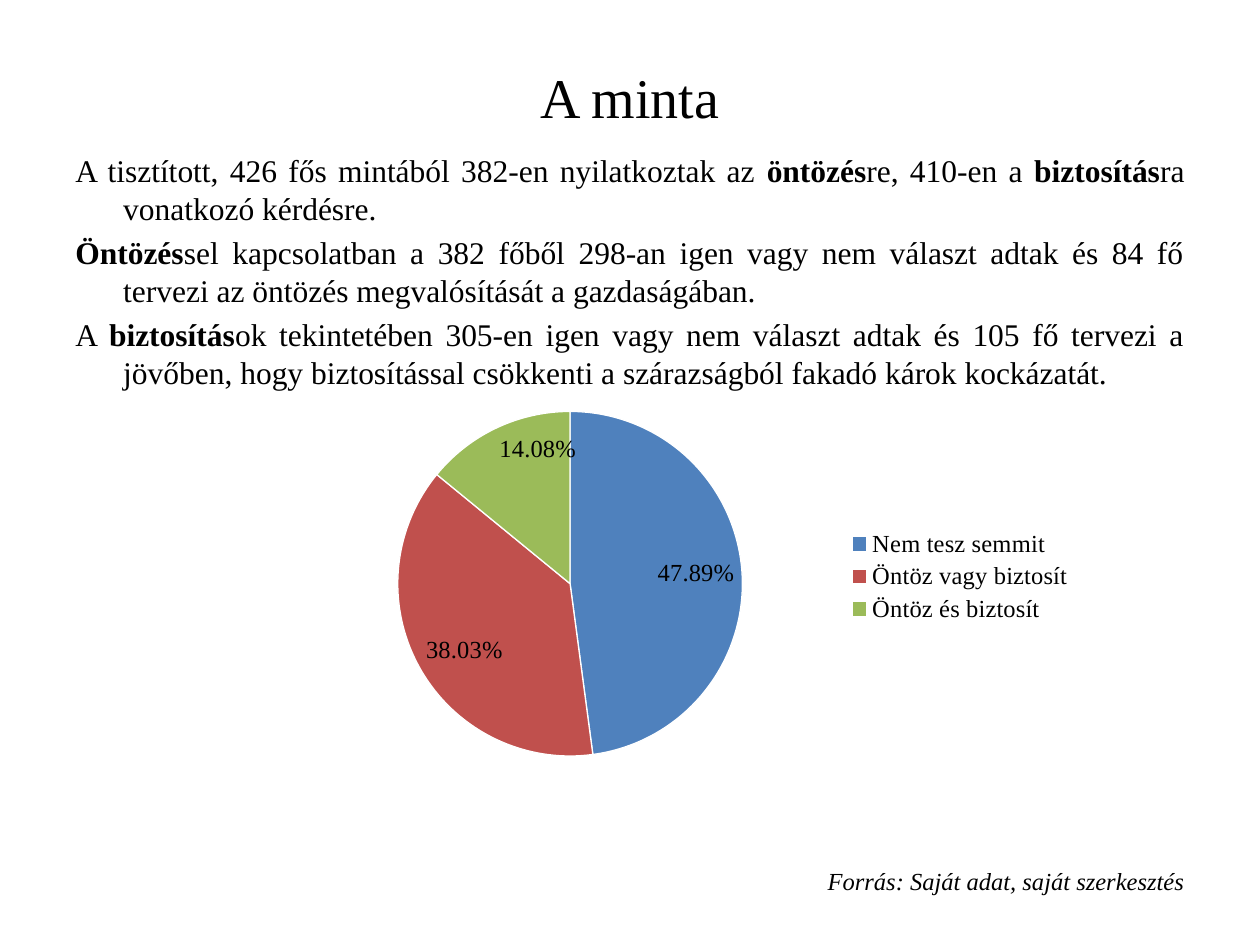
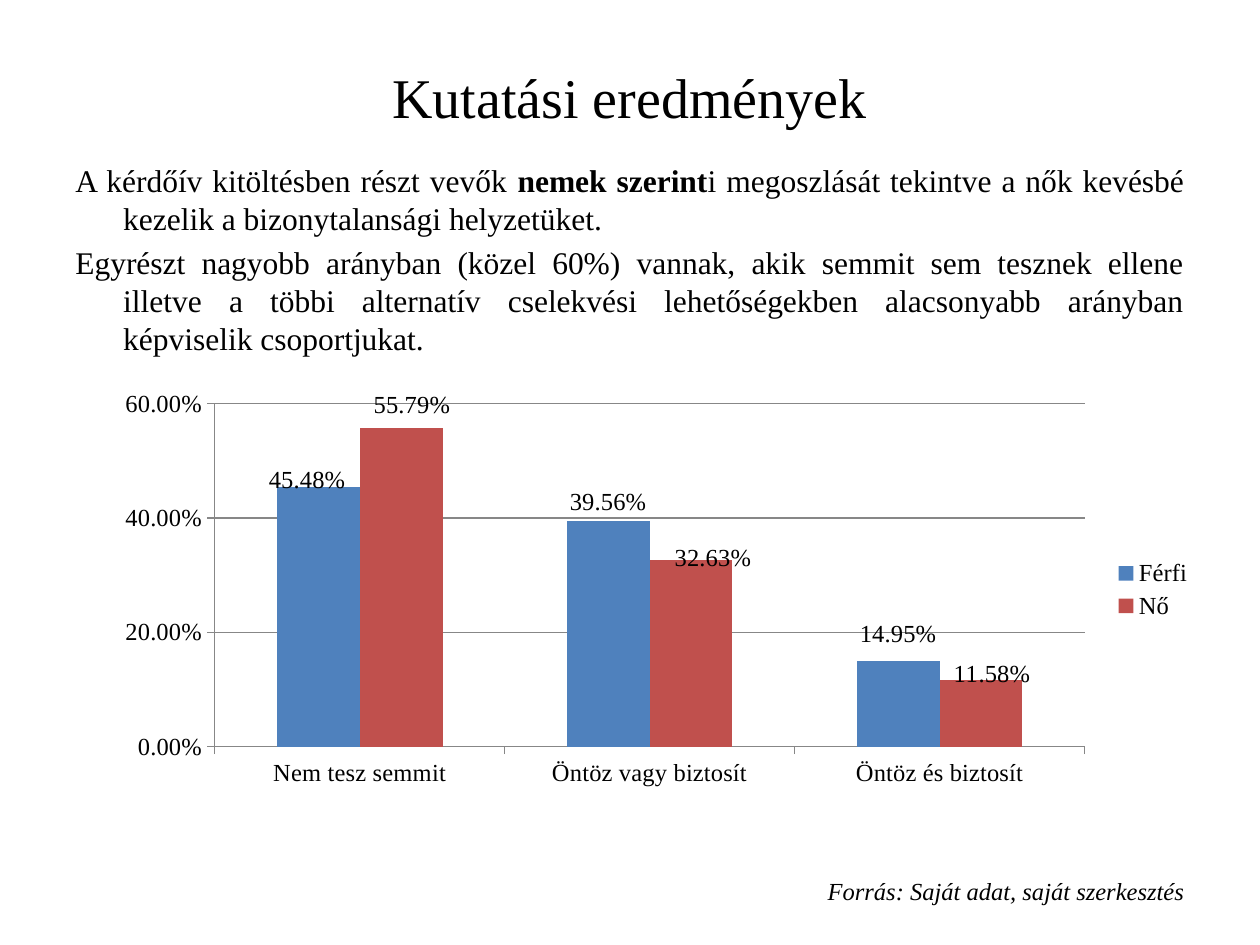
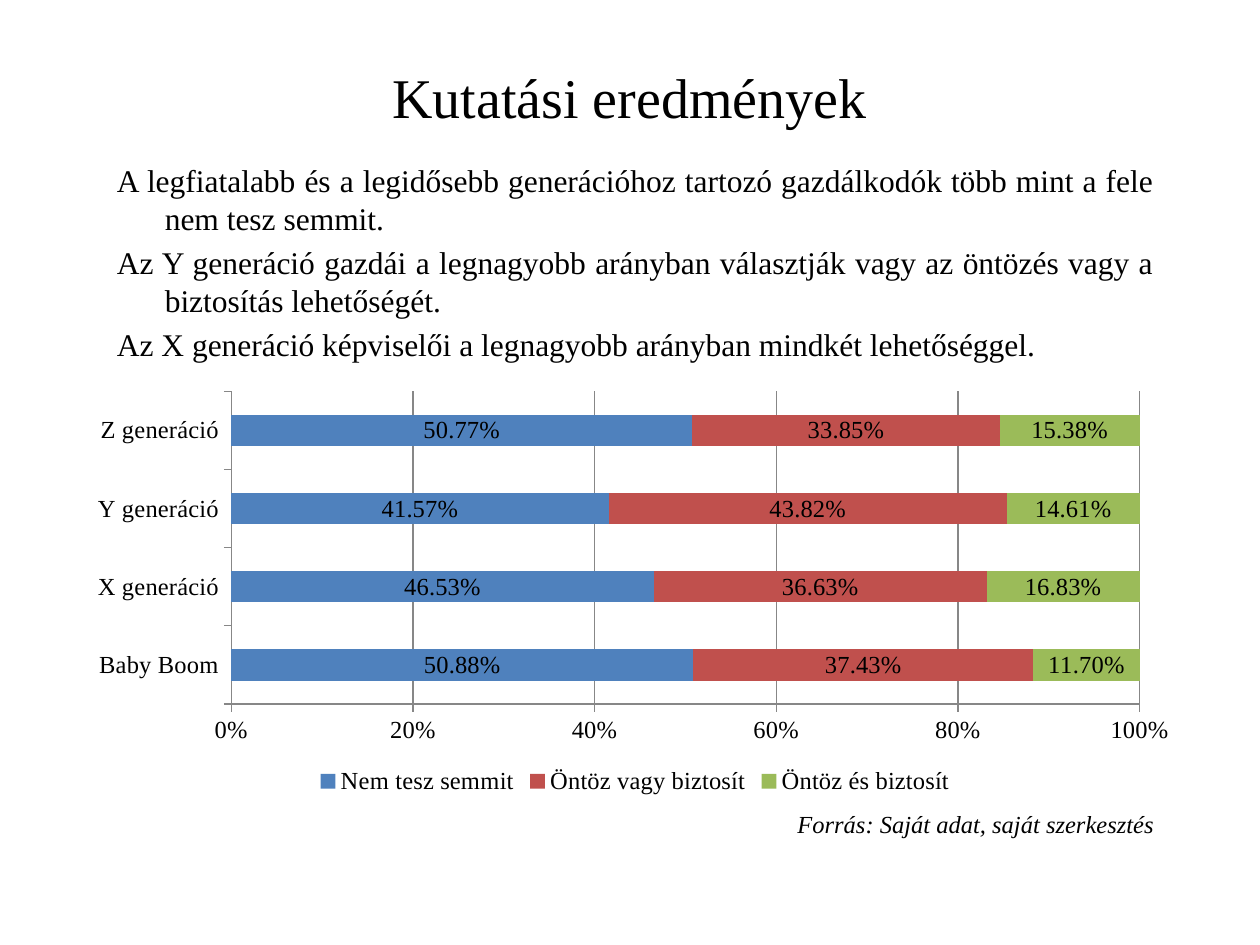
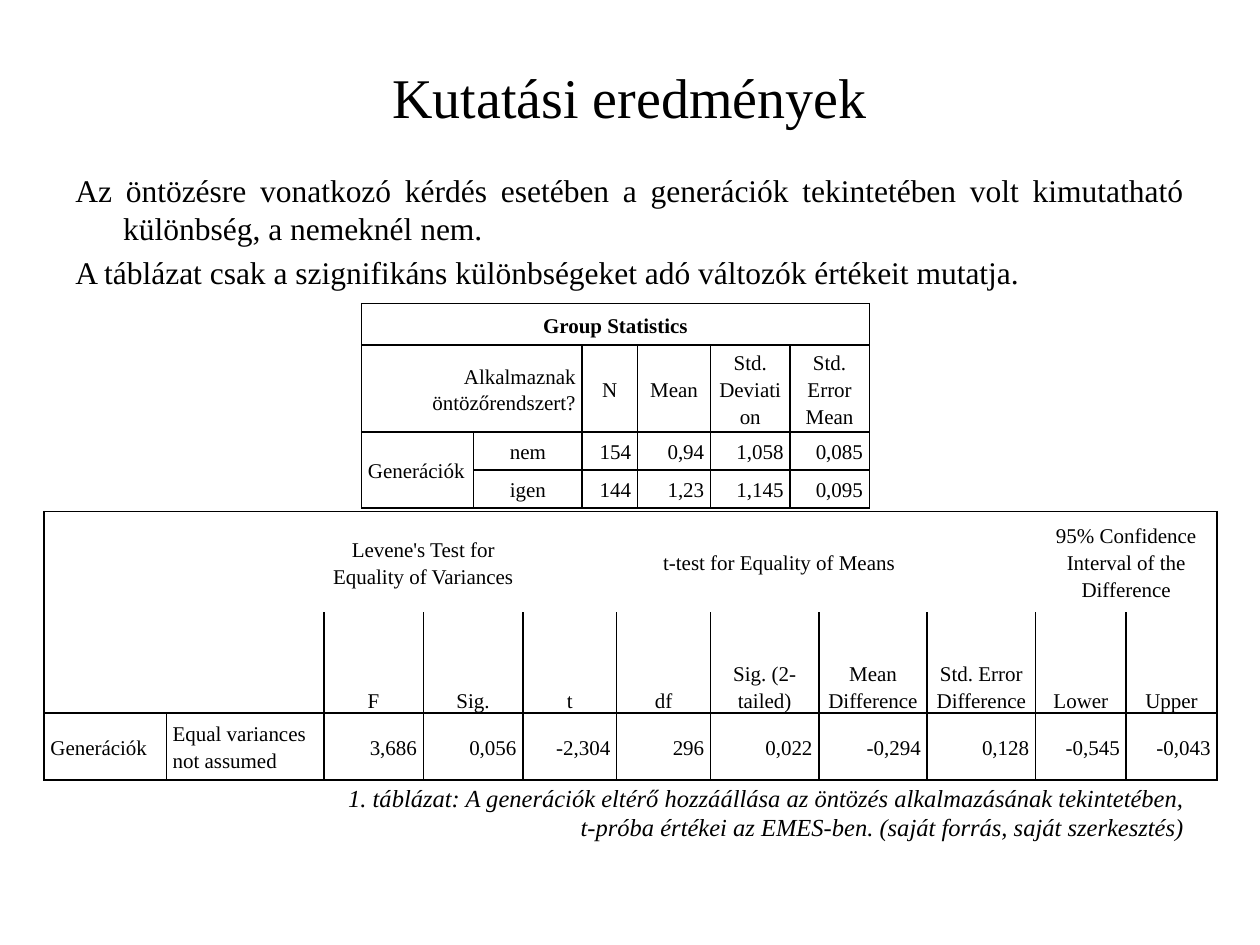
from dataclasses import dataclass

from lxml import etree
from pptx import Presentation
from pptx.chart.data import CategoryChartData
from pptx.dml.color import RGBColor
from pptx.enum.chart import XL_CHART_TYPE, XL_LABEL_POSITION, XL_LEGEND_POSITION, XL_TICK_MARK
from pptx.enum.text import MSO_ANCHOR, PP_ALIGN
from pptx.oxml.ns import qn
from pptx.util import Inches, Pt

PIE, COLUMNS, STACKED = XL_CHART_TYPE.PIE, XL_CHART_TYPE.COLUMN_CLUSTERED, XL_CHART_TYPE.BAR_STACKED_100
INSIDE_END, OUTSIDE_END, CENTERED = (
    XL_LABEL_POSITION.INSIDE_END, XL_LABEL_POSITION.OUTSIDE_END, XL_LABEL_POSITION.CENTER)
LEGEND_RIGHT, LEGEND_BOTTOM = XL_LEGEND_POSITION.RIGHT, XL_LEGEND_POSITION.BOTTOM
TICK_OUTSIDE = XL_TICK_MARK.OUTSIDE
JUSTIFY, RIGHT, CENTER = PP_ALIGN.JUSTIFY, PP_ALIGN.RIGHT, PP_ALIGN.CENTER
TOP, MIDDLE, BOTTOM = MSO_ANCHOR.TOP, MSO_ANCHOR.MIDDLE, MSO_ANCHOR.BOTTOM
ALIGNS = {"l": PP_ALIGN.LEFT, "c": CENTER, "r": RIGHT}
ANCHORS = {"m": MIDDLE, "b": BOTTOM}

# The slide is a grid of 100 columns by 75 rows of square units.
UNIT = Inches(0.1)
COLUMN_COUNT, ROW_COUNT = 100, 75
NO_TABLE_STYLE = "{2D5ABB26-0587-4C30-8999-92F81FD0307C}"


@dataclass(frozen=True)
class Theme:
    font: str = "Times New Roman"
    ink: RGBColor = RGBColor(0, 0, 0)
    paper: RGBColor = RGBColor(255, 255, 255)
    rule: RGBColor = RGBColor(0x87, 0x87, 0x87)
    series: tuple = tuple(map(RGBColor.from_string, ("4F81BD", "C0504D", "9BBB59")))
    title: Pt = Pt(32)
    body: Pt = Pt(18)
    small: Pt = Pt(14)
    cell: Pt = Pt(12)


THEME = Theme()
RESULTS_TITLE = "Kutatási eredmények"
SOURCE = "Forrás: Saját adat, saját szerkesztés"
STRATEGIES = ("Nem tesz semmit", "Öntöz vagy biztosít", "Öntöz és biztosít")


def units(*lengths):
    return [round(length * UNIT) for length in lengths]


def style_font(font, size, bold=False, italic=False):
    font.name, font.size, font.bold, font.italic = THEME.font, size, bold, italic
    font.color.rgb = THEME.ink


def add_run(paragraph, text, size, **style):
    run = paragraph.add_run()
    run.text = text
    style_font(run.font, size, **style)


def add_frame(slide, area, anchor):
    frame = slide.shapes.add_textbox(*units(*area)).text_frame
    frame.word_wrap = True
    frame.vertical_anchor = anchor
    return frame


def add_titled_slide(deck, title):
    slide = deck.slides.add_slide(deck.slide_layouts[6])
    heading = add_frame(slide, (5, 3, 90, 9.3), MIDDLE).paragraphs[0]
    heading.alignment = CENTER
    add_run(heading, title, THEME.title)
    return slide


def add_body(slide, area, statements, source, source_gap):
    """Write hanging statements, whose odd parts are bold, and a source line below."""
    frame = add_frame(slide, area, TOP)
    paragraph = frame.paragraphs[0]
    for parts in statements:
        for index, part in enumerate(parts):
            if part:
                add_run(paragraph, part, THEME.body, bold=index % 2 == 1)
        paragraph.alignment = JUSTIFY
        paragraph.space_before = Pt(3.6)
        paragraph = frame.add_paragraph()
    paragraph.alignment = RIGHT
    paragraph.space_before = Pt(source_gap)
    for index, line in enumerate(source):
        if index:
            paragraph.add_line_break()
        add_run(paragraph, line, THEME.small, italic=True)
    for paragraph in frame.paragraphs:
        properties = paragraph._p.get_or_add_pPr()
        properties.set("marL", str(Inches(0.38)))
        properties.set("indent", str(-Inches(0.38)))


def manual_layout(**values):
    layout = etree.Element(qn("c:layout"))
    manual = etree.SubElement(layout, qn("c:manualLayout"))
    for tag, value in values.items():
        etree.SubElement(manual, qn(f"c:{tag}")).set("val", str(value))
    return layout


def place_plot(chart, x, y, w, h):
    plot_area = chart._chartSpace.chart.plotArea
    for layout in plot_area.findall(qn("c:layout")):
        plot_area.remove(layout)
    plot_area.insert(0, manual_layout(
        layoutTarget="inner", xMode="edge", yMode="edge", x=x, y=y, w=w, h=h))


def add_chart(slide, kind, area, plot_box, categories, series, legend_at, label_at):
    """Add a chart of shares; series maps each name to its values."""
    data = CategoryChartData(number_format="0.00%")
    data.categories = categories
    for name, values in series.items():
        data.add_series(name, values)
    chart = slide.shapes.add_chart(kind, *units(*area), data).chart
    chart.has_title = False
    style_font(chart.font, THEME.small)
    chart.has_legend = True
    chart.legend.position = legend_at
    chart.legend.include_in_layout = False
    style_font(chart.legend.font, THEME.small)
    place_plot(chart, *plot_box)
    for one_series in chart.plots[0].series:
        labels = one_series.data_labels
        labels.show_value = True
        labels.number_format, labels.number_format_is_linked = "0.00%", False
        labels.position = label_at
        style_font(labels.font, THEME.small)
        for leader_lines in one_series._element.iter(qn("c:showLeaderLines")):
            leader_lines.set("val", "0")
    return chart


def paint(element, color):
    element.format.fill.solid()
    element.format.fill.fore_color.rgb = color


def style_bars(chart, top, axis_format, overlap):
    plot = chart.plots[0]
    plot.vary_by_categories = False
    plot.gap_width, plot.overlap = 150, overlap
    for bars, color in zip(plot.series, THEME.series):
        bars.invert_if_negative = False
        paint(bars, color)
    shares = chart.value_axis
    shares.minimum_scale, shares.maximum_scale, shares.major_unit = 0, top, 0.2
    shares.tick_labels.number_format = axis_format
    shares.tick_labels.number_format_is_linked = False
    shares.has_major_gridlines = True
    for axis in (shares, chart.category_axis):
        axis.major_tick_mark = TICK_OUTSIDE
        axis.format.line.color.rgb = THEME.rule
        style_font(axis.tick_labels.font, THEME.small)
    shares.major_gridlines.format.line.color.rgb = THEME.rule


def style_slices(chart):
    plot = chart.plots[0]
    plot.vary_by_categories = True
    for index, color in enumerate(THEME.series):
        point = plot.series[0].points[index]
        paint(point, color)
        point.format.line.color.rgb = THEME.paper
        point.format.line.width = Pt(0.75)


def nudge_label(series, index, dx, dy):
    """Shift one point's label by shares of the chart's size."""
    label = series.points[index].data_label
    label.position = OUTSIDE_END
    style_font(label.font, THEME.small)
    for element in series._element.iter(qn("c:dLbl")):
        if element.find(qn("c:idx")).get("val") == str(index):
            element.insert(1, manual_layout(x=dx, y=dy))


def draw_borders(cell, sides):
    properties = cell._tc.get_or_add_tcPr()
    for side in sides:
        line = etree.SubElement(properties, qn(f"a:ln{side}"), w=str(Pt(1)))
        fill = etree.SubElement(line, qn("a:solidFill"))
        etree.SubElement(fill, qn("a:srgbClr"), val=str(THEME.ink))


def add_table(slide, origin, widths, heights, rows, merges, aligns, anchors, sides_of):
    """Fill a plain table; aligns has a letter per cell, anchors a letter per row."""
    area = units(*origin, sum(widths), sum(heights))
    table = slide.shapes.add_table(len(heights), len(widths), *area).table
    table.first_row = table.horz_banding = False
    table._tbl.tblPr.find(qn("a:tableStyleId")).text = NO_TABLE_STYLE
    for column, width in zip(table.columns, units(*widths)):
        column.width = width
    for row, height in zip(table.rows, units(*heights)):
        row.height = height
    for first_row, first_column, last_row, last_column in merges:
        table.cell(first_row, first_column).merge(table.cell(last_row, last_column))
    for r, row in enumerate(rows):
        for c, text in enumerate(row):
            cell = table.cell(r, c)
            cell.margin_left = cell.margin_right = Inches(0.05)
            cell.margin_top = cell.margin_bottom = 0
            cell.vertical_anchor = ANCHORS[anchors[r]]
            draw_borders(cell, sides_of(r, c))
            cell.fill.background()
            paragraph = cell.text_frame.paragraphs[0]
            paragraph.alignment = ALIGNS[aligns[r][c]]
            paragraph.line_spacing = 1.15
            if text:
                add_run(paragraph, text, THEME.cell, bold=text == "Group Statistics")


def add_sample_slide(deck):
    slide = add_titled_slide(deck, "A minta")
    add_body(slide, (5, 11.5, 90, 56.7), [
        ("A tisztított, 426 fős mintából 382-en nyilatkoztak az ", "öntözés",
         "re, 410-en a ", "biztosítás", "ra vonatkozó kérdésre."),
        ("", "Öntözés", "sel kapcsolatban a 382 főből 298-an igen vagy nem választ adtak "
         "és 84 fő tervezi az öntözés megvalósítását a gazdaságában."),
        ("A ", "biztosítás", "ok tekintetében 305-en igen vagy nem választ adtak és 105 fő "
         "tervezi a jövőben, hogy biztosítással csökkenti a szárazságból fakadó károk "
         "kockázatát."),
    ], [SOURCE], 272)
    chart = add_chart(slide, PIE, (23.2, 31.2, 63, 29.1), (0.11, 0.05, 0.48, 0.94), STRATEGIES,
                      {"Series 1": (0.4789, 0.3803, 0.1408)}, LEGEND_RIGHT, INSIDE_END)
    style_slices(chart)


def add_gender_slide(deck):
    slide = add_titled_slide(deck, RESULTS_TITLE)
    add_body(slide, (5, 12.3, 90, 57.5), [
        ("A kérdőív kitöltésben részt vevők ", "nemek szerint",
         "i megoszlását tekintve a nők kevésbé kezelik a bizonytalansági helyzetüket."),
        ("Egyrészt nagyobb arányban (közel 60%) vannak, akik semmit sem tesznek ellene "
         "illetve a többi alternatív cselekvési lehetőségekben alacsonyabb arányban "
         "képviselik csoportjukat.",),
    ], [SOURCE], 297)
    chart = add_chart(slide, COLUMNS, (8.3, 30.4, 87.4, 32.8), (0.1, 0.05, 0.79, 0.83),
                      STRATEGIES,
                      {"Férfi": (0.4548, 0.3956, 0.1495), "Nő": (0.5579, 0.3263, 0.1158)},
                      LEGEND_RIGHT, OUTSIDE_END)
    style_bars(chart, 0.6, "0.00%", 0)
    men, women = chart.plots[0].series
    nudge_label(men, 0, -0.01, 0.03)
    nudge_label(men, 2, 0, -0.02)
    nudge_label(women, 0, 0.01, -0.01)
    nudge_label(women, 1, 0.02, 0.04)
    nudge_label(women, 2, 0.01, 0.03)


def add_generation_slide(deck):
    slide = add_titled_slide(deck, RESULTS_TITLE)
    add_body(slide, (8.3, 12.3, 84.3, 56.7), [
        ("A legfiatalabb és a legidősebb generációhoz tartozó gazdálkodók több mint a fele "
         "nem tesz semmit.",),
        ("Az Y generáció gazdái a legnagyobb arányban választják vagy az öntözés vagy a "
         "biztosítás lehetőségét.",),
        ("Az X generáció képviselői a legnagyobb arányban mindkét lehetőséggel.",),
    ], [SOURCE], 255)
    shares = ((0.5088, 0.4653, 0.4157, 0.5077),
              (0.3743, 0.3663, 0.4382, 0.3385),
              (0.117, 0.1683, 0.1461, 0.1538))
    chart = add_chart(slide, STACKED, (5.9, 30.4, 89, 33.1), (0.14, 0.02, 0.81, 0.75),
                      ("Baby Boom", "X generáció", "Y generáció", "Z generáció"),
                      dict(zip(STRATEGIES, shares)), LEGEND_BOTTOM, CENTERED)
    style_bars(chart, 1, "0%", 100)


def test_sides(row, column):
    """Borders of the t-test table: open headings above ruled columns."""
    if row == 2:
        return "LRTB"
    if column < 2:
        return ("L" if column == 0 else "") + ("T" if row == 0 else "B")
    if row == 1:
        return "LRB"
    return "RT" if column >= 9 else "T"


def add_t_test_slide(deck):
    slide = add_titled_slide(deck, RESULTS_TITLE)
    add_body(slide, (5, 13.1, 90, 55.9), [
        ("Az öntözésre vonatkozó kérdés esetében a generációk tekintetében volt kimutatható "
         "különbség, a nemeknél nem.",),
        ("A táblázat csak a szignifikáns különbségeket adó változók értékeit mutatja.",),
    ], ["1. táblázat: A generációk eltérő hozzáállása az öntözés alkalmazásának tekintetében,",
        "t-próba értékei az EMES-ben. (saját forrás, saját szerkesztés)"], 281)
    add_table(
        slide, (28.7, 24.1), (8.9, 8.6, 4.4, 5.8, 6.3, 6.3), (3.3, 5.7, 3, 3),
        [("Group Statistics", "", "", "", "", ""),
         ("Alkalmaznak öntözőrendszert?", "", "N", "Mean", "Std. Deviation", "Std. Error Mean"),
         ("Generációk", "nem", "154", "0,94", "1,058", "0,085"),
         ("", "igen", "144", "1,23", "1,145", "0,095")],
        [(0, 0, 0, 5), (1, 0, 1, 1), (2, 0, 3, 0)],
        ("cccccc", "rrcccc", "lcrrrr", "lcrrrr"), "mmmm", lambda row, column: "LRTB")
    add_table(
        slide, (3.5, 40.6), (9.7, 12.5, 7.9, 7.9, 7.45, 7.45, 8.6, 8.6, 8.6, 7.2, 7.2),
        (8, 8, 5.3),
        [("", "", "Levene's Test for Equality of Variances", "", "t-test for Equality of Means",
          "", "", "", "", "95% Confidence Interval of the Difference", ""),
         ("", "", "F", "Sig.", "t", "df", "Sig. (2-tailed)", "Mean Difference",
          "Std. Error Difference", "Lower", "Upper"),
         ("Generációk", "Equal variances not assumed", "3,686", "0,056", "-2,304", "296",
          "0,022", "-0,294", "0,128", "-0,545", "-0,043")],
        [(0, 0, 1, 1), (0, 2, 0, 3), (0, 4, 0, 8), (0, 9, 0, 10)],
        ("c" * 11, "c" * 11, "ll" + "r" * 9), "mbm", test_sides)


def main():
    deck = Presentation()
    deck.slide_width, deck.slide_height = units(COLUMN_COUNT, ROW_COUNT)
    add_sample_slide(deck)
    add_gender_slide(deck)
    add_generation_slide(deck)
    add_t_test_slide(deck)
    deck.save("out.pptx")


if __name__ == "__main__":
    main()
